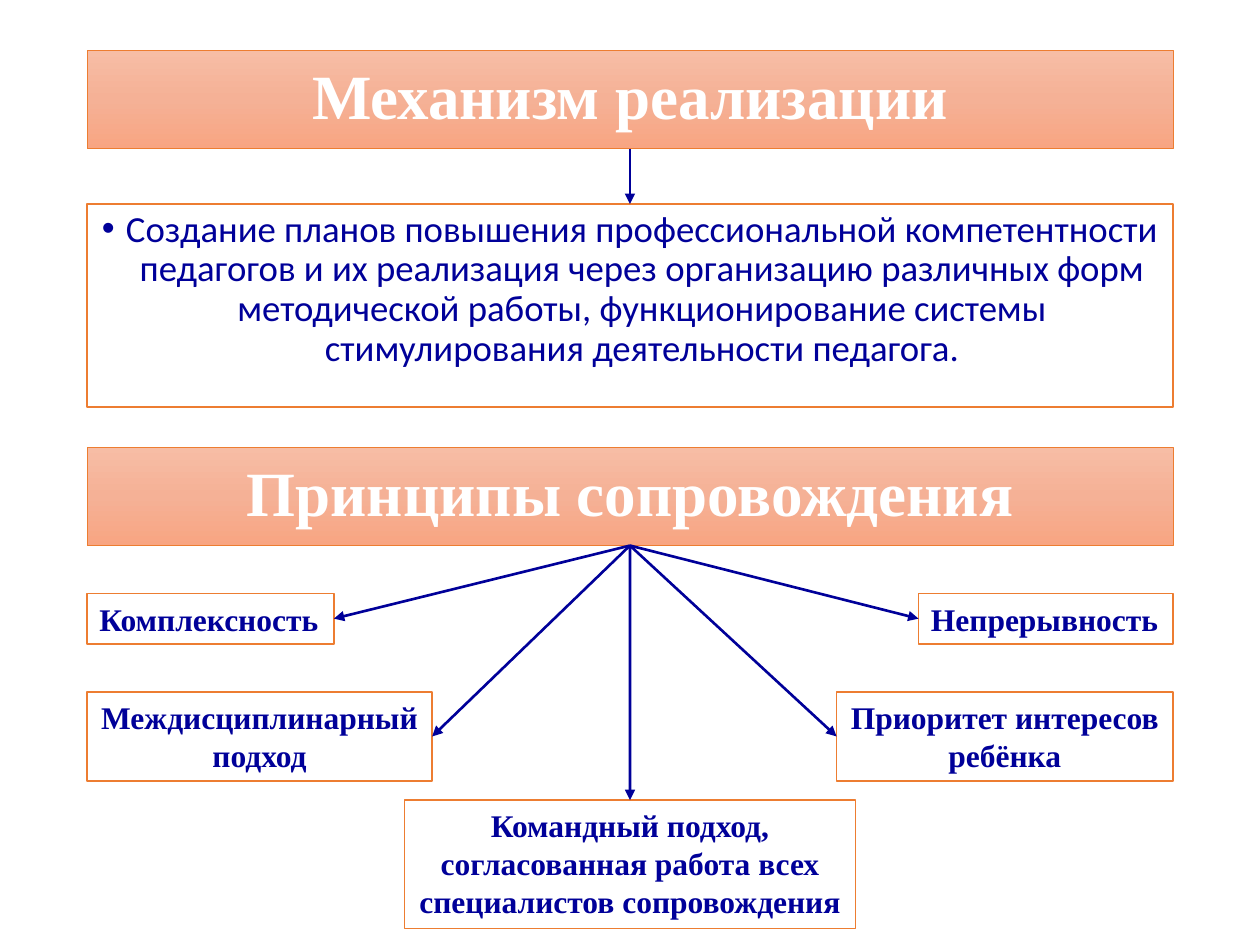
from copy import deepcopy
from dataclasses import dataclass

from lxml.etree import SubElement
from pptx import Presentation
from pptx.dml.color import RGBColor as RGB
from pptx.enum.shapes import MSO_CONNECTOR as Connector, MSO_SHAPE as Preset
from pptx.enum.text import MSO_ANCHOR as Anchor, MSO_AUTO_SIZE as AutoSize, PP_ALIGN as Align
from pptx.oxml.ns import qn
from pptx.util import Inches, Pt


@dataclass(frozen=True)
class Theme:
    navy: RGB = RGB(0x00, 0x00, 0x99)
    orange: RGB = RGB(0xED, 0x7D, 0x31)
    white: RGB = RGB(0xFF, 0xFF, 0xFF)
    banner: tuple = (RGB(0xF7, 0xBD, 0xA5), RGB(0xF5, 0xB1, 0x96), RGB(0xF8, 0xA5, 0x82))
    serif: str = "Times New Roman"
    sans: str = "Calibri"
    heading: Pt = Pt(36)
    body: Pt = Pt(21)
    label: Pt = Pt(18)


THEME = Theme()
TOP, LEFT, BOTTOM, RIGHT = range(4)
MARGIN, CONTENT_WIDTH = 0.69, 8.62
BANNER_HEIGHT = 0.78

# text, box, alignment, wrapping, side where the arrow arrives
PRINCIPLES = [
    ("Комплексность", (0.69, 4.71, 1.96, 0.4), Align.LEFT, False, RIGHT),
    ("Междисциплинарный подход", (0.69, 5.49, 2.74, 0.71), Align.CENTER, True, RIGHT),
    ("Командный подход, согласованная работа всех специалистов сопровождения",
     (3.21, 6.35, 3.58, 1.02), Align.CENTER, True, TOP),
    ("Непрерывность", (7.29, 4.71, 2.02, 0.4), Align.LEFT, False, LEFT),
    ("Приоритет интересов ребёнка", (6.64, 5.49, 2.67, 0.71), Align.CENTER, True, LEFT),
]


def place(shape, box):
    shape.left, shape.top, shape.width, shape.height = map(Inches, box)


def add_box(slide, box):
    shape = slide.shapes.add_shape(Preset.RECTANGLE, *map(Inches, box))
    shape.shadow.inherit = False
    shape.fill.solid()
    shape.fill.fore_color.rgb = THEME.white
    shape.line.color.rgb = THEME.orange
    shape.line.width = Pt(1)
    return shape


def write(shape, text, size, color, font, bold=False, align=Align.CENTER, anchor=Anchor.TOP):
    frame = shape.text_frame
    frame.word_wrap = True
    frame.auto_size = AutoSize.NONE
    frame.vertical_anchor = anchor
    paragraph = frame.paragraphs[0]
    paragraph.alignment = align
    run = paragraph.add_run()
    run.text = text
    run.font.size, run.font.name, run.font.bold = size, font, bold
    run.font.color.rgb = color
    return paragraph


def fill_gradient(shape, colors):
    """Fill from top to bottom with three evenly spaced colours."""
    shape.fill.gradient()
    shape.fill.gradient_angle = 270
    first, last = shape._element.spPr.find(qn("a:gradFill")).find(qn("a:gsLst"))
    first.addnext(deepcopy(first))
    for index, (stop, color) in enumerate(zip(shape.fill.gradient_stops, colors)):
        stop.color.rgb = color
        stop.position = index / 2


def style_banner(shape, text):
    fill_gradient(shape, THEME.banner)
    shape.line.color.rgb = THEME.orange
    shape.line.width = Pt(0.5)
    paragraph = write(shape, text, THEME.heading, THEME.white, THEME.serif,
                      bold=True, anchor=Anchor.MIDDLE)
    paragraph.line_spacing = 0.9
    return shape


def add_mechanism(slide, box):
    shape = add_box(slide, box)
    paragraph = write(
        shape,
        "Создание планов повышения профессиональной компетентности педагогов "
        "и их реализация через организацию различных форм методической работы, "
        "функционирование системы стимулирования деятельности педагога.",
        THEME.body, THEME.navy, THEME.sans)
    paragraph.line_spacing = 0.9
    properties = paragraph._p.get_or_add_pPr()
    properties.set("marL", str(Inches(0.19)))
    properties.set("indent", str(Inches(-0.19)))
    SubElement(properties, qn("a:buFont")).set("typeface", "Arial")
    SubElement(properties, qn("a:buChar")).set("char", "•")
    return shape


def add_arrow(slide, source, target, side):
    """Join the bottom of source to the given side of target."""
    arrow = slide.shapes.add_connector(Connector.STRAIGHT, 0, 0, 0, 0)
    arrow.begin_connect(source, BOTTOM)
    arrow.end_connect(target, side)
    arrow.line.color.rgb = THEME.navy
    arrow.line.width = Pt(1.5)
    SubElement(arrow.line._get_or_add_ln(), qn("a:tailEnd")).set("type", "triangle")
    SubElement(arrow._element.spPr, qn("a:effectLst"))


def add_principles(slide, source):
    for text, box, align, wrap, side in PRINCIPLES:
        label = add_box(slide, box)
        write(label, text, THEME.label, THEME.navy, THEME.serif, bold=True, align=align)
        label.text_frame.word_wrap = wrap
        label.text_frame.auto_size = AutoSize.SHAPE_TO_FIT_TEXT
        add_arrow(slide, source, label, side)


def build_slide(presentation):
    slide = presentation.slides.add_slide(presentation.slide_layouts[5])
    title = slide.shapes.title
    place(title, (MARGIN, 0.4, CONTENT_WIDTH, BANNER_HEIGHT))
    style_banner(title, "Механизм реализации")
    mechanism = add_mechanism(slide, (MARGIN, 1.62, CONTENT_WIDTH, 1.61))
    add_arrow(slide, title, mechanism, TOP)
    heading = add_box(slide, (MARGIN, 3.55, CONTENT_WIDTH, BANNER_HEIGHT))
    style_banner(heading, "Принципы сопровождения")
    add_principles(slide, heading)


def main():
    presentation = Presentation()
    presentation.slide_width, presentation.slide_height = Inches(10), Inches(7.5)
    build_slide(presentation)
    presentation.save("out.pptx")


if __name__ == "__main__":
    main()
